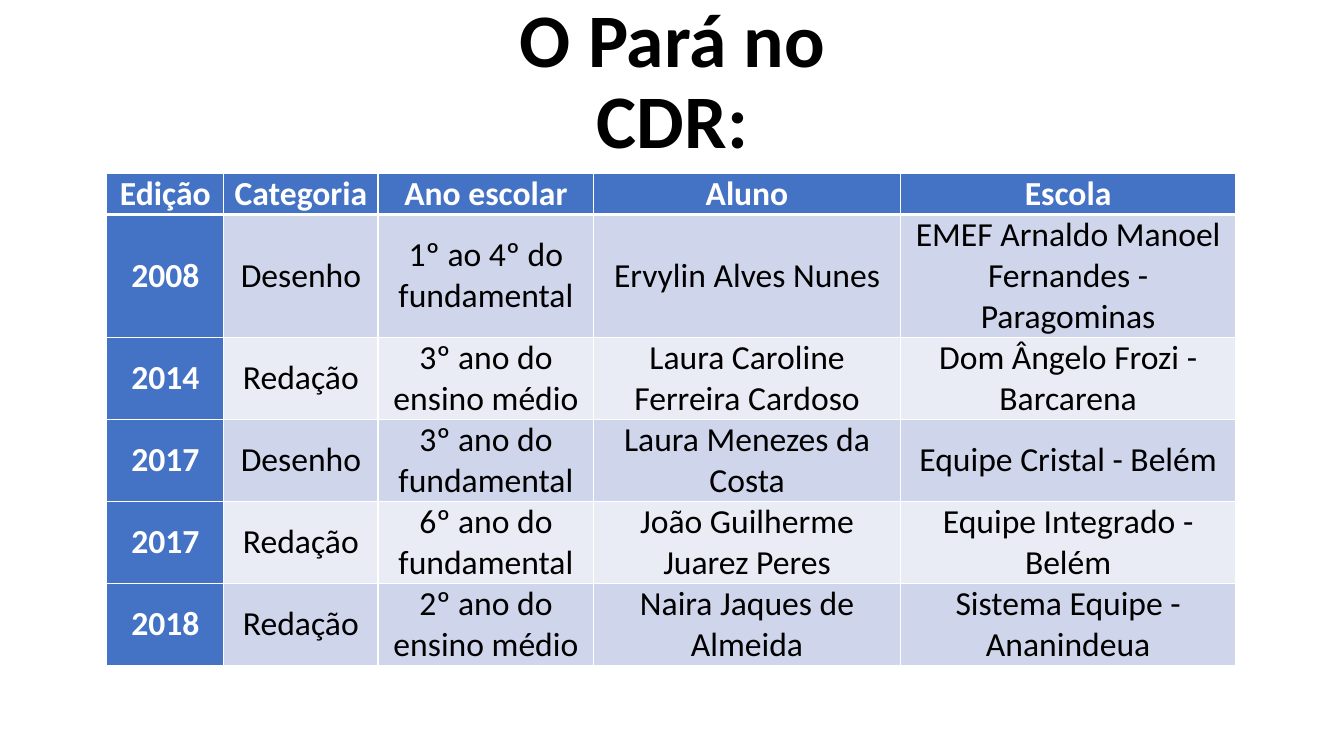
from dataclasses import dataclass

from lxml import etree
from pptx import Presentation
from pptx import util as u
from pptx.dml.color import RGBColor
from pptx.enum import text
from pptx.oxml import ns


@dataclass(frozen=True)
class Theme:
    font: str = "Calibri"
    title: int = 54
    body: int = 24
    ink: str = "000000"
    white: str = "FFFFFF"
    blue: str = "4472C4"
    bands: tuple[str, str] = ("CFD5EA", "E9EBF5")
    thin: int = 1
    thick: int = 3


@dataclass(frozen=True)
class Prize:
    year: str
    kind: str
    grade: str
    pupil: str
    school: str

    def cells(self) -> tuple[str, ...]:
        return self.year, self.kind, self.grade, self.pupil, self.school


THEME = Theme()
HEAD = Prize("Edição", "Categoria", "Ano escolar", "Aluno", "Escola")
PRIZES = (
    Prize("2008", "Desenho", "1º ao 4º do fundamental", "Ervylin Alves Nunes",
          "EMEF Arnaldo Manoel Fernandes - Paragominas"),
    Prize("2014", "Redação", "3º ano do ensino médio",
          "Laura Caroline Ferreira Cardoso", "Dom Ângelo Frozi - Barcarena"),
    Prize("2017", "Desenho", "3º ano do fundamental",
          "Laura Menezes da Costa", "Equipe Cristal - Belém"),
    Prize("2017", "Redação", "6º ano do fundamental",
          "João Guilherme Juarez Peres", "Equipe Integrado - Belém"),
    Prize("2018", "Redação", "2º ano do ensino médio",
          "Naira Jaques de Almeida", "Sistema Equipe - Ananindeua"),
)
WIDTHS = (1.16, 1.53, 2.14, 3.04, 3.33)
HEAD_H, ROW_H = 0.35, 0.7


def style(para, size: int, color: str, bold: bool) -> None:
    para.alignment = text.PP_ALIGN.CENTER
    font = para.font
    font.name, font.size, font.bold = THEME.font, u.Pt(size), bold
    font.color.rgb = RGBColor.from_string(color)


def edge(cell, side: str, width: int) -> None:
    props = cell._tc.get_or_add_tcPr()
    line = etree.SubElement(props, ns.qn(f"a:ln{side}"), w=str(u.Pt(width)))
    fill = etree.SubElement(line, ns.qn("a:solidFill"))
    etree.SubElement(fill, ns.qn("a:srgbClr"), val=THEME.white)


def fill_cell(cell, words: str, row: int, col: int) -> None:
    strong = row == 0 or col == 0
    cell.text = words
    cell.vertical_anchor = text.MSO_ANCHOR.MIDDLE
    cell.margin_left = cell.margin_right = u.Inches(0.07)
    cell.margin_top = cell.margin_bottom = 0
    for side in "LRTB":
        heavy = (row, side) in ((0, "B"), (1, "T"))
        edge(cell, side, THEME.thick if heavy else THEME.thin)
    cell.fill.solid()
    shade = THEME.blue if strong else THEME.bands[(row - 1) % 2]
    cell.fill.fore_color.rgb = RGBColor.from_string(shade)
    style(cell.text_frame.paragraphs[0], THEME.body,
          THEME.white if strong else THEME.ink, strong)


def add_title(slide, words: str) -> None:
    title = slide.shapes.title
    title.left, title.top = u.Inches(4.27), u.Inches(0.65)
    title.width, title.height = u.Inches(4.8), u.Inches(1.04)
    frame = title.text_frame
    frame.text = words
    frame.word_wrap = True
    frame.auto_size = text.MSO_AUTO_SIZE.NONE
    frame.vertical_anchor = text.MSO_ANCHOR.BOTTOM
    para = frame.paragraphs[0]
    para.line_spacing = 0.9
    style(para, THEME.title, THEME.ink, True)


def add_prizes(slide) -> None:
    rows = (HEAD, *PRIZES)
    high = HEAD_H + ROW_H * len(PRIZES)
    table = slide.shapes.add_table(
        len(rows), len(WIDTHS), u.Inches(1.06), u.Inches(1.72),
        u.Inches(sum(WIDTHS)), u.Inches(high)).table
    table.first_col = True
    for col, width in zip(table.columns, WIDTHS):
        col.width = u.Inches(width)
    for r, prize in enumerate(rows):
        table.rows[r].height = u.Inches(ROW_H if r else HEAD_H)
        for c, words in enumerate(prize.cells()):
            fill_cell(table.cell(r, c), words, r, c)


def main() -> None:
    deck = Presentation()
    deck.slide_width, deck.slide_height = u.Inches(13.33), u.Inches(7.5)
    slide = deck.slides.add_slide(deck.slide_layouts[0])
    blank = slide.placeholders[1].element
    blank.getparent().remove(blank)
    add_title(slide, "O Pará no CDR:")
    add_prizes(slide)
    deck.save("out.pptx")


if __name__ == "__main__":
    main()
